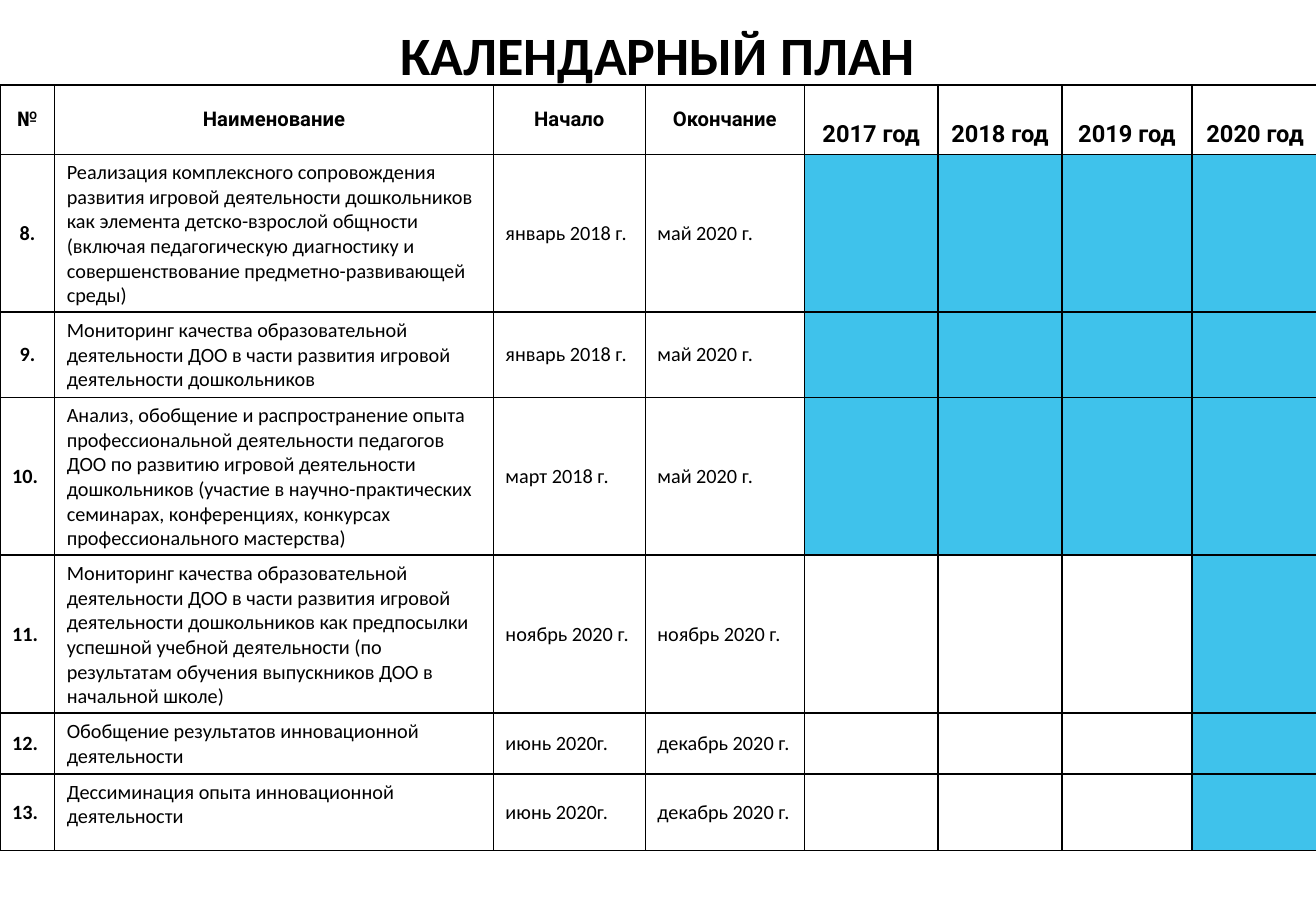
from dataclasses import dataclass

from lxml.etree import SubElement
from pptx import Presentation
from pptx.dml.color import RGBColor
from pptx.enum.text import MSO_ANCHOR as Anchor, PP_ALIGN as Align
from pptx.oxml.ns import qn
from pptx.table import _Cell as Cell
from pptx.text.text import TextFrame as Frame
from pptx.util import Inches, Pt

BLACK = RGBColor(0x00, 0x00, 0x00)
WHITE = RGBColor(0xFF, 0xFF, 0xFF)
BLUE = RGBColor(0x3F, 0xC2, 0xEB)

WIDTHS = [0.45, 3.61, 1.25, 1.31, 1.1, 1.02, 1.07, 1.04]
HEADS = ["№", "Наименование", "Начало", "Окончание"]
YEARS = [2017, 2018, 2019, 2020]
HEAD_HIGH = 0.57


@dataclass
class Task:
    num: str
    name: str
    start: str
    end: str
    since: int
    high: float


TASKS = [
    Task("8.", "Реализация комплексного сопровождения развития игровой деятельности "
         "дошкольников как элемента детско-взрослой общности (включая педагогическую "
         "диагностику и совершенствование предметно-развивающей среды)",
         "январь 2018 г.", "май 2020 г.", 2017, 1.3),
    Task("9.", "Мониторинг качества образовательной деятельности ДОО в части развития "
         "игровой деятельности дошкольников",
         "январь 2018 г.", "май 2020 г.", 2017, 0.7),
    Task("10.", "Анализ, обобщение и распространение опыта профессиональной деятельности "
         "педагогов ДОО по развитию игровой деятельности дошкольников (участие в "
         "научно-практических семинарах, конференциях, конкурсах профессионального мастерства)",
         "март 2018 г.", "май 2020 г.", 2017, 1.3),
    Task("11.", "Мониторинг качества образовательной деятельности ДОО в части развития "
         "игровой деятельности дошкольников как предпосылки успешной учебной деятельности "
         "(по результатам обучения выпускников ДОО в начальной школе)",
         "ноябрь 2020 г.", "ноябрь 2020 г.", 2020, 1.3),
    Task("12.", "Обобщение результатов инновационной деятельности",
         "июнь 2020г.", "декабрь 2020 г.", 2020, 0.5),
    Task("13.", "Дессиминация опыта инновационной деятельности",
         "июнь 2020г.", "декабрь 2020 г.", 2020, 0.63),
]


def write(frame: Frame, text: str, size: int, face: str = "Calibri",
          bold: bool = False, align: Align = Align.LEFT) -> None:
    line = frame.paragraphs[0]
    line.text = text
    line.alignment = align
    font = line.font
    font.name, font.size, font.bold = face, Pt(size), bold
    font.color.rgb = BLACK


def dress(cell: Cell, fill: RGBColor = WHITE, anchor: Anchor = Anchor.MIDDLE) -> None:
    cell.vertical_anchor = anchor
    props = cell._tc.get_or_add_tcPr()
    for side in ("a:lnL", "a:lnR", "a:lnT", "a:lnB"):
        edge = SubElement(props, qn(side), w=str(Pt(1)))
        paint = SubElement(edge, qn("a:solidFill"))
        SubElement(paint, qn("a:srgbClr"), val=str(BLACK))
    cell.fill.solid()
    cell.fill.fore_color.rgb = fill


def main() -> None:
    deck = Presentation()
    deck.slide_width, deck.slide_height = Inches(10.83), Inches(7.5)
    slide = deck.slides.add_slide(deck.slide_layouts[6])

    title = slide.shapes.add_textbox(Inches(0.22), Inches(0.13), Inches(10.39), Inches(0.63))
    title.text_frame.word_wrap = True
    write(title.text_frame, "КАЛЕНДАРНЫЙ ПЛАН", 32, bold=True, align=Align.CENTER)

    highs = [HEAD_HIGH] + [task.high for task in TASKS]
    plan = slide.shapes.add_table(len(highs), len(WIDTHS), Inches(0), Inches(0.7),
                                  Inches(10.83), Inches(sum(highs))).table
    plan.first_row = plan.horz_banding = False
    for col, width in zip(plan.columns, WIDTHS):
        col.width = Inches(width)
    for row, high in zip(plan.rows, highs):
        row.height = Inches(high)

    for col, head in enumerate(HEADS):
        cell = plan.cell(0, col)
        dress(cell)
        write(cell.text_frame, head, 12, "Roboto", True, Align.CENTER)
    for col, year in enumerate(YEARS, len(HEADS)):
        cell = plan.cell(0, col)
        dress(cell, anchor=Anchor.BOTTOM)
        write(cell.text_frame, f"{year} год", 14, "Roboto", True, Align.CENTER)

    for row, task in enumerate(TASKS, 1):
        for col, text in enumerate((task.num, task.name, task.start, task.end)):
            cell = plan.cell(row, col)
            dress(cell, anchor=Anchor.TOP if col == 1 else Anchor.MIDDLE)
            short = col == 0 and len(text) == 2
            write(cell.text_frame, text, 12, bold=col == 0,
                  align=Align.CENTER if short else Align.LEFT)
        for col, year in enumerate(YEARS, len(HEADS)):
            dress(plan.cell(row, col), BLUE if year >= task.since else WHITE)

    deck.save("out.pptx")


if __name__ == "__main__":
    main()
